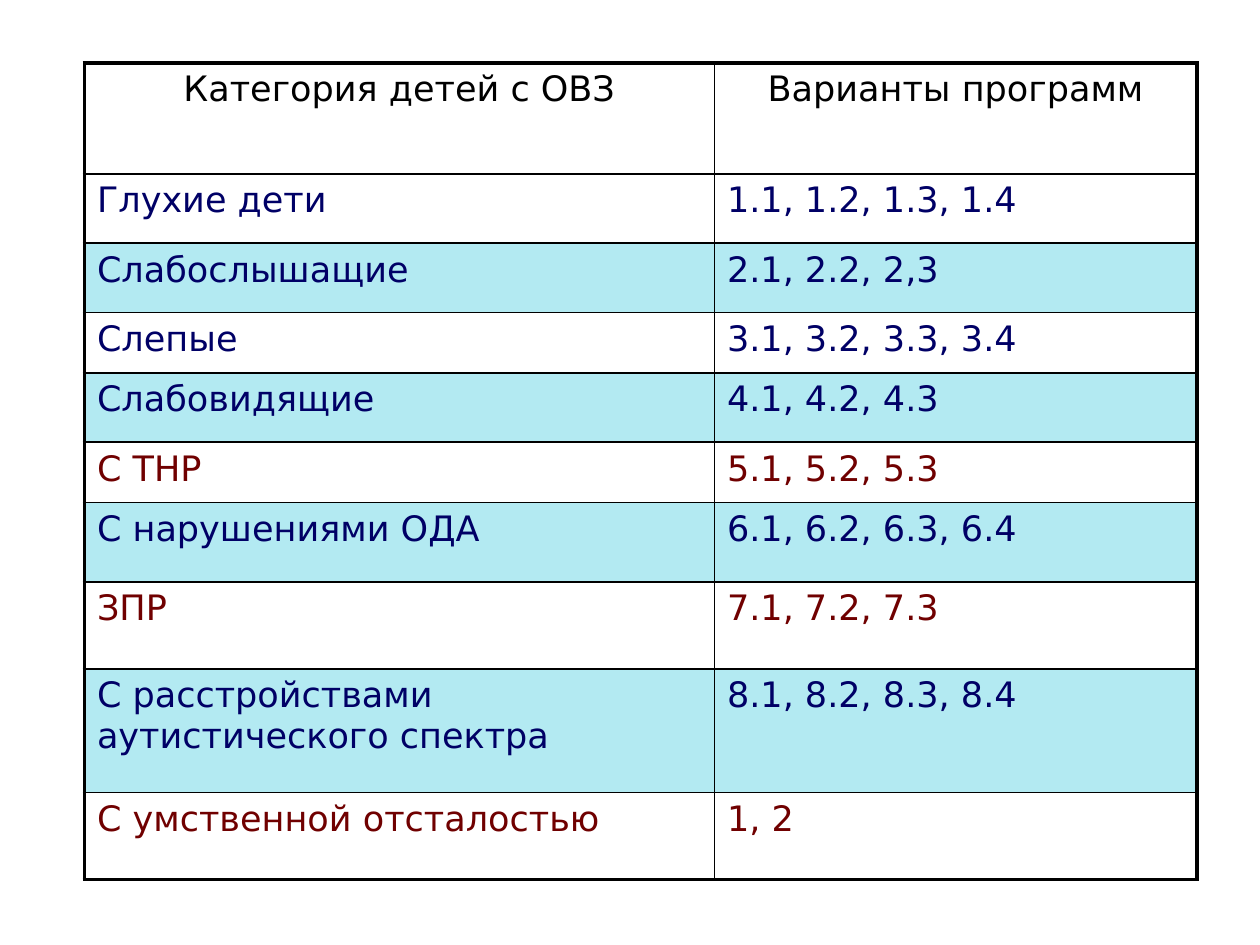
from lxml.etree import SubElement
from pptx import Presentation
from pptx.dml.color import RGBColor
from pptx.enum.text import PP_ALIGN as Align
from pptx.oxml.ns import qn
from pptx.util import Inches, Pt

BLACK = RGBColor(0x00, 0x00, 0x00)
NAVY = RGBColor(0x00, 0x00, 0x66)
MAROON = RGBColor(0x70, 0x00, 0x00)
AQUA = RGBColor(0xB3, 0xEA, 0xF2)
FONT = "DejaVu Sans"
THIN, THICK = 1, 2.25

COLUMN_WIDTHS = [5, 3.83]
ROWS = [
    (0.88, BLACK, "Категория детей с ОВЗ", "Варианты программ"),
    (0.55, NAVY, "Глухие дети", "1.1, 1.2, 1.3, 1.4"),
    (0.55, NAVY, "Слабослышащие", "2.1, 2.2, 2,3"),
    (0.48, NAVY, "Слепые", "3.1, 3.2, 3.3, 3.4"),
    (0.55, NAVY, "Слабовидящие", "4.1, 4.2, 4.3"),
    (0.48, MAROON, "С ТНР", "5.1, 5.2, 5.3"),
    (0.63, NAVY, "С нарушениями ОДА", "6.1, 6.2, 6.3, 6.4"),
    (0.69, MAROON, "ЗПР", "7.1, 7.2, 7.3"),
    (0.98, NAVY, "С расстройствами аутистического спектра", "8.1, 8.2, 8.3, 8.4"),
    (0.69, MAROON, "С умственной отсталостью", "1, 2"),
]


def write_text(cell, text, color=BLACK, size=20, align=Align.LEFT):
    paragraph = cell.text_frame.paragraphs[0]
    paragraph.alignment = align
    run = paragraph.add_run()
    run.text = text
    run.font.name = FONT
    run.font.size = Pt(size)
    run.font.color.rgb = color


def draw_border(cell, side, width):
    properties = cell._tc.get_or_add_tcPr()
    line = SubElement(properties, qn(f"a:ln{side}"), w=str(Pt(width)))
    fill = SubElement(line, qn("a:solidFill"))
    SubElement(fill, qn("a:srgbClr"), val=str(BLACK))


presentation = Presentation()
presentation.slide_width = Inches(10)
presentation.slide_height = Inches(7.5)
slide = presentation.slides.add_slide(presentation.slide_layouts[6])

table = slide.shapes.add_table(
    len(ROWS), len(COLUMN_WIDTHS), Inches(0.67), Inches(0.5),
    Inches(sum(COLUMN_WIDTHS)), Inches(sum(row[0] for row in ROWS)),
).table
table.first_row = False
table.horz_banding = False

for column, width in zip(table.columns, COLUMN_WIDTHS):
    column.width = Inches(width)

last_row, last_column = len(ROWS) - 1, len(COLUMN_WIDTHS) - 1
for row_index, (height, color, *texts) in enumerate(ROWS):
    table.rows[row_index].height = Inches(height)
    for column_index, text in enumerate(texts):
        cell = table.cell(row_index, column_index)
        align = Align.CENTER if row_index == 0 else Align.LEFT
        write_text(cell, text, color=color, align=align)

        outer_sides = {
            "L": column_index == 0,
            "R": column_index == last_column,
            "T": row_index == 0,
            "B": row_index == last_row,
        }
        for side, is_outer in outer_sides.items():
            draw_border(cell, side, THICK if is_outer else THIN)

        if row_index > 0 and row_index % 2 == 0:
            cell.fill.solid()
            cell.fill.fore_color.rgb = AQUA
        else:
            cell.fill.background()

presentation.save("out.pptx")
